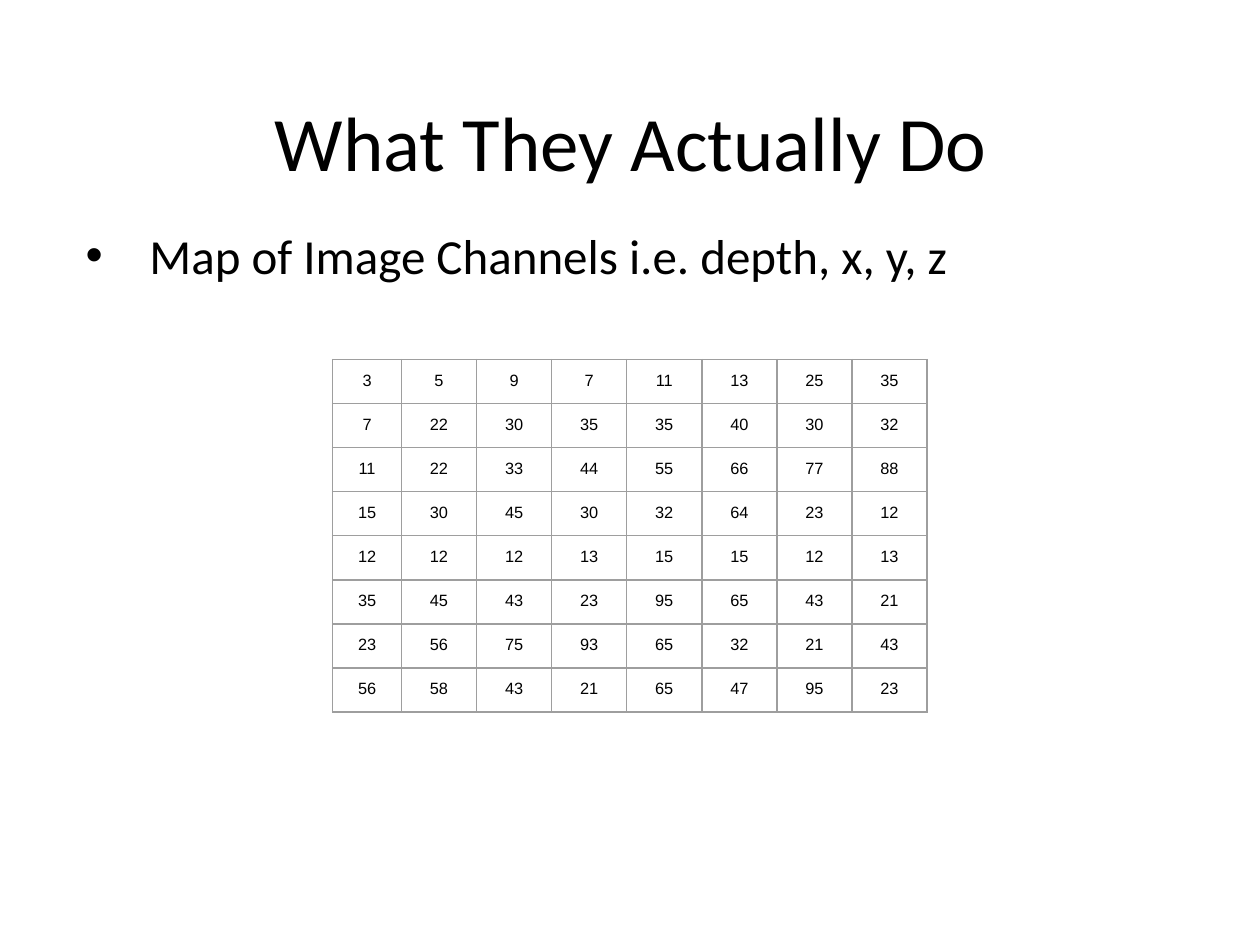
from dataclasses import dataclass

from lxml.etree import SubElement
from pptx import Presentation
from pptx.dml.color import RGBColor
from pptx.enum.text import MSO_ANCHOR, PP_ALIGN
from pptx.oxml.ns import qn
from pptx.slide import Slide
from pptx.table import _Cell
from pptx.text.text import _Paragraph
from pptx.util import Inches, Pt


@dataclass(frozen=True)
class Theme:
    ink: str = "000000"
    paper: str = "FFFFFF"
    grid: str = "9E9E9E"
    text_font: str = "Calibri"
    cell_font: str = "Arial"
    title_size: float = 33
    body_size: float = 21
    cell_size: float = 7
    grid_width: float = 0.75
    inset: float = 0.07


@dataclass(frozen=True)
class TextBlock:
    text: str
    top: float
    height: float
    size: float
    align: PP_ALIGN
    bulleted: bool = False


THEME = Theme()
SLIDE_WIDTH = 7.5
SLIDE_HEIGHT = SLIDE_WIDTH * 3 / 4
BLOCK_LEFT, BLOCK_WIDTH = 0.26, 6.99
BULLET_MARGIN, BULLET_INDENT = 0.56, -0.38

TEXT_BLOCKS = [
    TextBlock("What They Actually Do", 0.49, 0.63, THEME.title_size, PP_ALIGN.CENTER),
    TextBlock("Map of Image Channels i.e. depth, x, y, z", 1.27, 3.74,
              THEME.body_size, PP_ALIGN.LEFT, bulleted=True),
]

CHANNEL_LEFT, CHANNEL_TOP = 1.98, 2.14
CHANNEL_WIDTH, CHANNEL_HEIGHT = 3.54, 2.1
FIRST_COLUMN_WIDTH = 0.41
CHANNEL_VALUES = [
    [3, 5, 9, 7, 11, 13, 25, 35],
    [7, 22, 30, 35, 35, 40, 30, 32],
    [11, 22, 33, 44, 55, 66, 77, 88],
    [15, 30, 45, 30, 32, 64, 23, 12],
    [12, 12, 12, 13, 15, 15, 12, 13],
    [35, 45, 43, 23, 95, 65, 43, 21],
    [23, 56, 75, 93, 65, 32, 21, 43],
    [56, 58, 43, 21, 65, 47, 95, 23],
]


def write(paragraph: _Paragraph, text: str, font: str, size: float, align: PP_ALIGN) -> None:
    paragraph.text = text
    paragraph.alignment = align
    for run in paragraph.runs:
        run.font.name = font
        run.font.size = Pt(size)
        run.font.color.rgb = RGBColor.from_string(THEME.ink)


def add_bullet(paragraph: _Paragraph) -> None:
    properties = paragraph._p.get_or_add_pPr()
    properties.set("marL", str(Inches(BULLET_MARGIN)))
    properties.set("indent", str(Inches(BULLET_INDENT)))
    SubElement(properties, qn("a:buFont")).set("typeface", THEME.cell_font)
    SubElement(properties, qn("a:buChar")).set("char", "•")


def set_insets(holder) -> None:
    for side in ("left", "right", "top", "bottom"):
        setattr(holder, f"margin_{side}", Inches(THEME.inset))


def add_text_block(slide: Slide, block: TextBlock) -> None:
    frame = slide.shapes.add_textbox(
        Inches(BLOCK_LEFT), Inches(block.top), Inches(BLOCK_WIDTH), Inches(block.height)
    ).text_frame
    frame.word_wrap = True
    frame.vertical_anchor = MSO_ANCHOR.TOP
    set_insets(frame)
    paragraph = frame.paragraphs[0]
    write(paragraph, block.text, THEME.text_font, block.size, block.align)
    if block.bulleted:
        add_bullet(paragraph)


def add_borders(cell: _Cell) -> None:
    properties = cell._tc.get_or_add_tcPr()
    for edge in ("a:lnL", "a:lnR", "a:lnT", "a:lnB"):
        border = SubElement(properties, qn(edge))
        border.set("w", str(Pt(THEME.grid_width)))
        fill = SubElement(border, qn("a:solidFill"))
        SubElement(fill, qn("a:srgbClr")).set("val", THEME.grid)


def add_channel_map(slide: Slide, values: list[list[int]]) -> None:
    row_count, column_count = len(values), len(values[0])
    channel_map = slide.shapes.add_table(
        row_count, column_count, Inches(CHANNEL_LEFT), Inches(CHANNEL_TOP),
        Inches(CHANNEL_WIDTH), Inches(CHANNEL_HEIGHT)
    ).table
    channel_map.first_row = False
    channel_map.horz_banding = False
    other_width = (CHANNEL_WIDTH - FIRST_COLUMN_WIDTH) / (column_count - 1)
    for index, column in enumerate(channel_map.columns):
        column.width = Inches(other_width if index else FIRST_COLUMN_WIDTH)
    for row, row_values in zip(channel_map.rows, values):
        row.height = Inches(CHANNEL_HEIGHT / row_count)
        for cell, value in zip(row.cells, row_values):
            set_insets(cell)
            cell.vertical_anchor = MSO_ANCHOR.TOP
            write(cell.text_frame.paragraphs[0], str(value),
                  THEME.cell_font, THEME.cell_size, PP_ALIGN.CENTER)
            add_borders(cell)
            cell.fill.background()


def main() -> None:
    presentation = Presentation()
    presentation.slide_width = Inches(SLIDE_WIDTH)
    presentation.slide_height = Inches(SLIDE_HEIGHT)
    slide = presentation.slides.add_slide(presentation.slide_layouts[6])
    slide.background.fill.solid()
    slide.background.fill.fore_color.rgb = RGBColor.from_string(THEME.paper)
    for block in TEXT_BLOCKS:
        add_text_block(slide, block)
    add_channel_map(slide, CHANNEL_VALUES)
    presentation.save("out.pptx")


if __name__ == "__main__":
    main()
